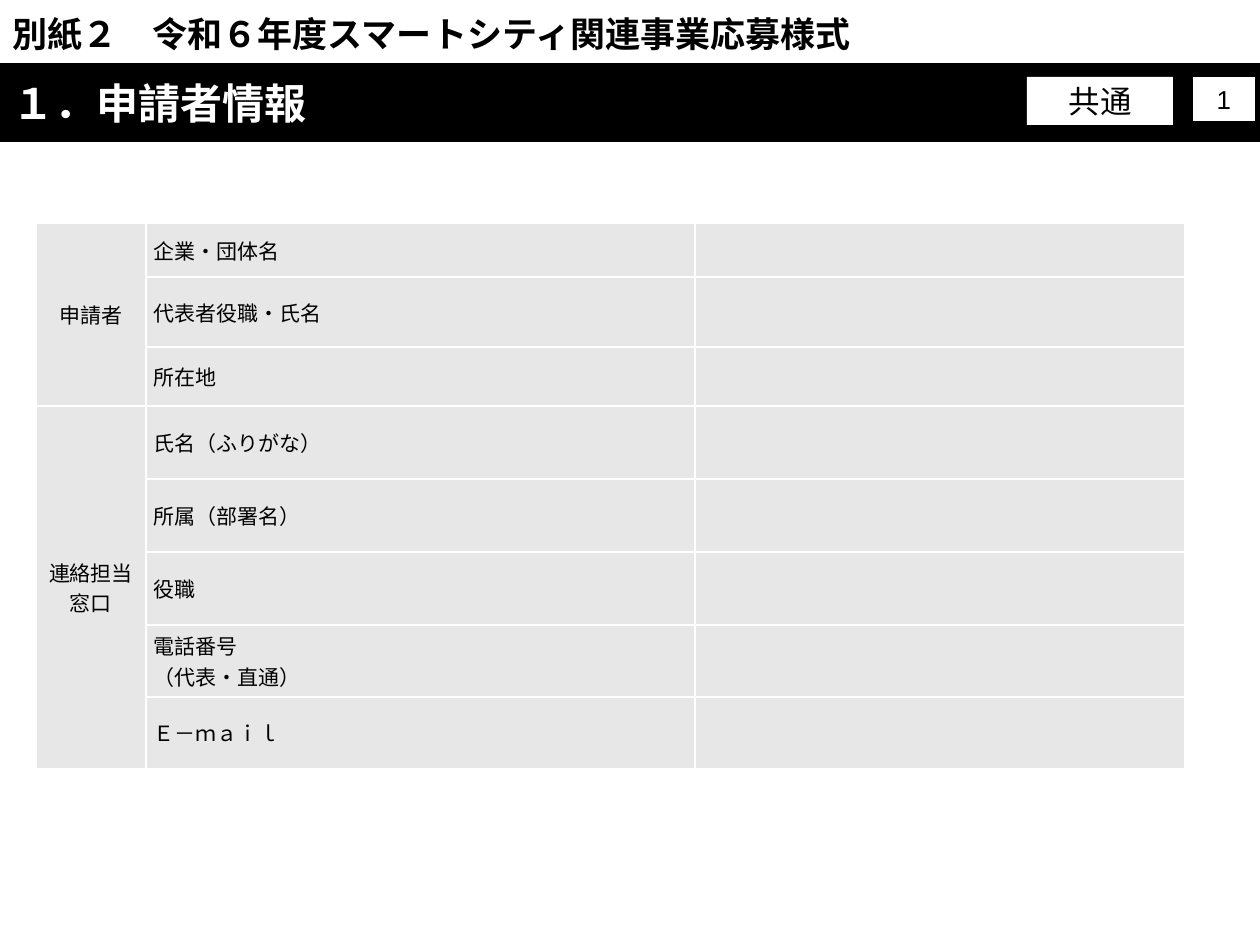
from dataclasses import dataclass

from lxml import etree
from pptx import Presentation
from pptx.dml.color import RGBColor
from pptx.enum import shapes, text
from pptx.oxml import ns
from pptx.util import Emu, Pt

SCALE = 914400 / 126
JP = "Noto Sans CJK JP"
LATIN = "Arial"
BLACK, WHITE, GREY = "000000", "FFFFFF", "E7E7E7"
COLUMNS = (110, 549, 490)
ROWS = (54, 70, 59, 73, 73, 73, 72, 72)


@dataclass(frozen=True)
class Group:
    name: str
    items: tuple[str, ...]


@dataclass(frozen=True)
class Label:
    wording: str
    box: tuple[int, int, int, int]
    size: float
    outline: bool = False


GROUPS = (
    Group("申請者", ("企業・団体名", "代表者役職・氏名", "所在地")),
    Group("連絡担当窓口", ("氏名（ふりがな）", "所属（部署名）", "役職",
                     "電話番号\n（代表・直通）", "Ｅ－ｍａｉｌ")),
)
LABELS = (
    Label("共通", (1027, 77, 146, 48), 18),
    Label("1", (1192, 76, 64, 46), 14.8, True),
)


def px(n: float) -> Emu:
    return Emu(round(n * SCALE))


def rgb(value: str) -> RGBColor:
    return RGBColor.from_string(value)


def fill(target, color: str) -> None:
    target.fill.solid()
    target.fill.fore_color.rgb = rgb(color)


def write(tf, wording: str, size: float, color: str, align,
          font: str = JP, bold: bool = False) -> None:
    tf.text = wording
    for p in tf.paragraphs:
        p.alignment = align
        p.font.size = Pt(size)
        p.font.bold = bold
        p.font.name = font
        p.font.color.rgb = rgb(color)
        props = p._p.pPr.find(ns.qn("a:defRPr"))
        etree.SubElement(props, ns.qn("a:ea"), typeface=JP)


def add_borders(cell) -> None:
    props = cell._tc.get_or_add_tcPr()
    for i, side in enumerate(("lnL", "lnR", "lnT", "lnB")):
        ln = etree.Element(ns.qn(f"a:{side}"), w=str(Pt(1)))
        solid = etree.SubElement(ln, ns.qn("a:solidFill"))
        etree.SubElement(solid, ns.qn("a:srgbClr"), val=WHITE)
        props.insert(i, ln)


def style_cell(cell) -> None:
    fill(cell, GREY)
    add_borders(cell)
    cell.vertical_anchor = text.MSO_ANCHOR.MIDDLE
    cell.margin_left = cell.margin_right = px(8)
    cell.margin_top = cell.margin_bottom = 0


def add_form(s) -> None:
    frame = s.shapes.add_table(len(ROWS), len(COLUMNS), px(36), px(223),
                               px(sum(COLUMNS)), px(sum(ROWS)))
    table = frame.table
    table.first_row = table.horz_banding = False
    for column, width in zip(table.columns, COLUMNS):
        column.width = px(width)
    for row, height in zip(table.rows, ROWS):
        row.height = px(height)
    for cell in table.iter_cells():
        style_cell(cell)
    top = 0
    for group in GROUPS:
        head = table.cell(top, 0)
        head.merge(table.cell(top + len(group.items) - 1, 0))
        write(head.text_frame, group.name, 12, BLACK, text.PP_ALIGN.CENTER)
        head._tc.get_or_add_tcPr().set("vert", "eaVert")
        for i, item in enumerate(group.items, top):
            write(table.cell(i, 1).text_frame, item, 12, BLACK,
                  text.PP_ALIGN.JUSTIFY)
        top += len(group.items)


def add_title(s) -> None:
    sp = s.shapes.title
    sp.left, sp.top, sp.width, sp.height = map(px, (0, 63, 1260, 79))
    fill(sp, BLACK)
    tf = sp.text_frame
    tf.auto_size = text.MSO_AUTO_SIZE.NONE
    tf.vertical_anchor = text.MSO_ANCHOR.MIDDLE
    write(tf, "１．申請者情報", 24, WHITE, text.PP_ALIGN.LEFT, bold=True)


def add_heading(s) -> None:
    tf = s.shapes.add_textbox(*map(px, (0, 6, 987, 56))).text_frame
    tf.word_wrap = True
    write(tf, "別紙２　令和６年度スマートシティ関連事業応募様式", 20, BLACK,
          text.PP_ALIGN.LEFT, LATIN, True)


def add_label(s, label: Label) -> None:
    sp = s.shapes.add_shape(shapes.MSO_SHAPE.RECTANGLE, *map(px, label.box))
    sp.shadow.inherit = False
    fill(sp, WHITE)
    if label.outline:
        sp.line.color.rgb = rgb(BLACK)
        sp.line.width = Pt(0.75)
    else:
        sp.line.fill.background()
    sp.text_frame.vertical_anchor = text.MSO_ANCHOR.MIDDLE
    write(sp.text_frame, label.wording, label.size, BLACK,
          text.PP_ALIGN.CENTER, LATIN)


def main() -> None:
    prs = Presentation()
    prs.slide_width, prs.slide_height = px(1260), px(945)
    s = prs.slides.add_slide(prs.slide_layouts[5])
    add_form(s)
    add_title(s)
    add_heading(s)
    for label in LABELS:
        add_label(s, label)
    prs.save("out.pptx")


if __name__ == "__main__":
    main()
